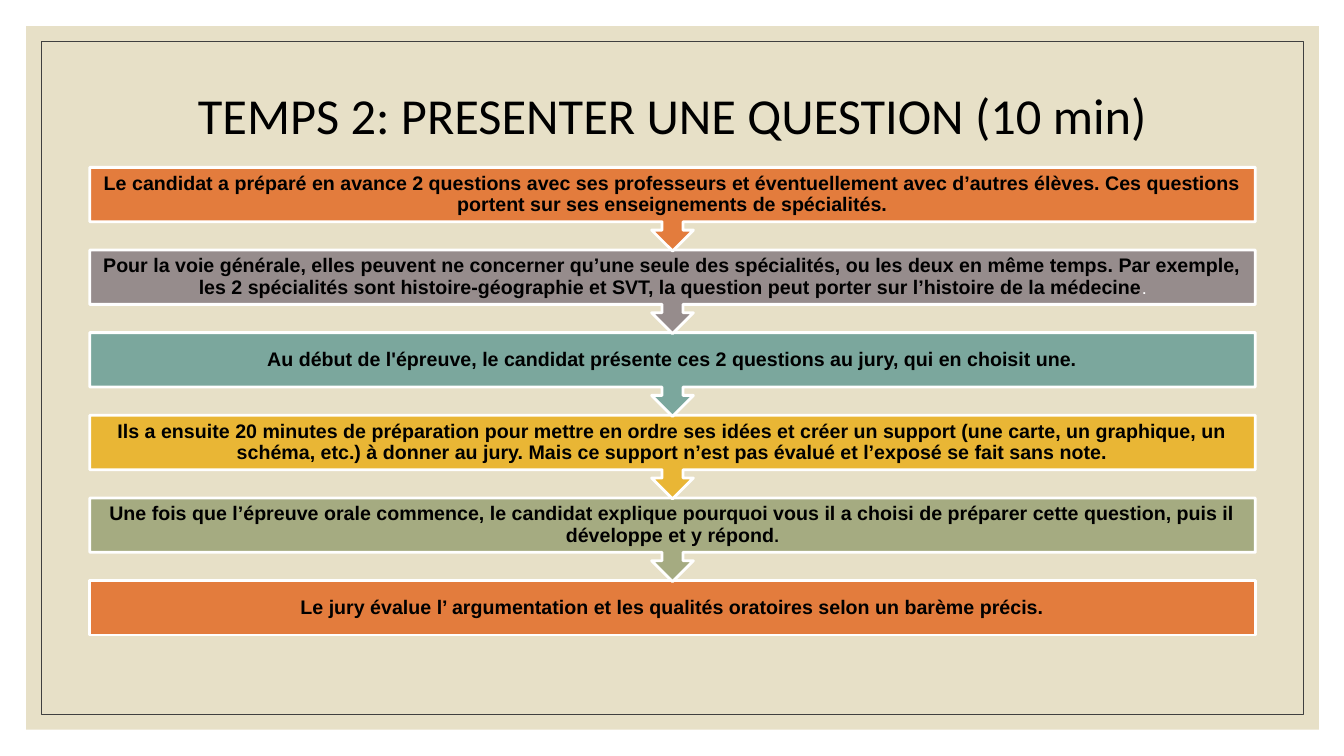
from pptx import Presentation
from pptx.dml.color import RGBColor
from pptx.enum.shapes import MSO_SHAPE
from pptx.enum.text import MSO_ANCHOR, MSO_AUTO_SIZE, PP_ALIGN
from pptx.util import Inches, Pt

RECTANGLE = MSO_SHAPE.RECTANGLE
CALLOUT = MSO_SHAPE.UP_ARROW_CALLOUT
MIDDLE = MSO_ANCHOR.MIDDLE
CENTER = PP_ALIGN.CENTER
NO_AUTOFIT = MSO_AUTO_SIZE.NONE
TITLE_ONLY = 5

BLACK, WHITE = "000000", "FFFFFF"
STEP_LEFT, STEP_WIDTH = 0.89, 11.56
STEP_TOP, STEP_PITCH = 1.66, 0.82
BOX_HEIGHT, CALLOUT_HEIGHT = 0.54, 0.83

# Each step: fill colour, then its runs as (text, size, colour)
STEPS = [
    ("E37C3D", [("Le candidat a préparé en avance 2 questions avec ses professeurs et "
                 "éventuellement avec d’autres élèves. Ces questions portent sur ses "
                 "enseignements de spécialités.", 14, BLACK)]),
    ("968C8C", [("Pour la voie générale, elles peuvent ne concerner qu’une seule des "
                 "spécialités, ou les deux en même temps. Par exemple, les 2 spécialités "
                 "sont histoire-géographie et SVT, la question peut porter sur l’histoire "
                 "de la médecine", 14, BLACK),
                (".", 9, WHITE)]),
    ("7BA79D", [("Au début de l'épreuve, le candidat présente ces 2 questions au jury, "
                 "qui en choisit une.", 14, BLACK)]),
    ("E9B635", [("Ils a ensuite 20 minutes de préparation pour mettre en ordre ses idées "
                 "et créer un support (une carte, un graphique, un schéma, etc.) à donner "
                 "au jury. Mais ce support n’est pas évalué et l’exposé se fait sans "
                 "note.", 14, BLACK)]),
    ("A5AB81", [("Une fois que l’épreuve orale commence, le candidat explique pourquoi "
                 "vous il a choisi de préparer cette question, puis il développe et y "
                 "répond", 14, BLACK),
                (".", 12, BLACK)]),
    ("E37C3D", [("Le jury évalue l’ argumentation et les qualités oratoires selon un "
                 "barème précis.", 14, BLACK)]),
]


def color(hex_string):
    return RGBColor.from_string(hex_string)


class SlideBuilder:
    def __init__(self, slide):
        self.slide = slide
        self.title_font = "Calibri"
        self.body_font = "Arial"

    def shape(self, kind, box, fill=None, line=None, line_width=1, rotation=0):
        shape = self.slide.shapes.add_shape(kind, *map(Inches, box))
        shape.shadow.inherit = False
        shape.rotation = rotation
        if fill:
            shape.fill.solid()
            shape.fill.fore_color.rgb = color(fill)
        else:
            shape.fill.background()
        if line:
            shape.line.color.rgb = color(line)
            shape.line.width = Pt(line_width)
        else:
            shape.line.fill.background()

    def fill_frame(self, frame, runs, font, margin, bold=False):
        """Set up a centred text frame and return its paragraph."""
        frame.word_wrap = True
        frame.auto_size = NO_AUTOFIT
        frame.vertical_anchor = MIDDLE
        frame.margin_left = frame.margin_right = Inches(margin)
        frame.margin_top = frame.margin_bottom = Inches(margin)
        paragraph = frame.paragraphs[0]
        paragraph.alignment = CENTER
        for text, size, text_color in runs:
            run = paragraph.add_run()
            run.text = text
            run.font.name = font
            run.font.size = Pt(size)
            run.font.bold = bold
            run.font.color.rgb = color(text_color)
        return paragraph

    def text(self, box, runs):
        text_box = self.slide.shapes.add_textbox(*map(Inches, box))
        paragraph = self.fill_frame(text_box.text_frame, runs, self.body_font, 0.11, True)
        paragraph.line_spacing = 0.9

    def title(self, box, text, size):
        """Place the title and bring it in front of the background panels."""
        title = self.slide.shapes.title
        title.left, title.top, title.width, title.height = map(Inches, box)
        self.fill_frame(title.text_frame, [(text, size, BLACK)], self.title_font, 0)
        title.element.getparent().append(title.element)

    def step(self, top, fill, runs, is_last):
        text_box = (STEP_LEFT, top, STEP_WIDTH, BOX_HEIGHT)
        if is_last:
            self.shape(RECTANGLE, text_box, fill, WHITE, 2)
        else:
            callout_box = (STEP_LEFT, top, STEP_WIDTH, CALLOUT_HEIGHT)
            self.shape(CALLOUT, callout_box, fill, WHITE, 2, rotation=180)
        self.text(text_box, runs)


def main():
    presentation = Presentation()
    presentation.slide_width = Inches(13.33)
    presentation.slide_height = Inches(7.5)
    layout = presentation.slide_layouts[TITLE_ONLY]
    builder = SlideBuilder(presentation.slides.add_slide(layout))

    builder.shape(RECTANGLE, (0.26, 0.26, 12.82, 6.98), fill="E7E0C7")
    builder.shape(RECTANGLE, (0.41, 0.41, 12.52, 6.68), line="404040", line_width=0.5)

    # Bottom step first, so that each arrow tip lies over the next box
    last = len(STEPS) - 1
    for index in range(last, -1, -1):
        fill, runs = STEPS[index]
        builder.step(STEP_TOP + index * STEP_PITCH, fill, runs, index == last)

    builder.title((1.17, 0.7, 11, 0.87), "TEMPS 2: PRESENTER UNE QUESTION (10 min)", 36)
    presentation.save("out.pptx")


if __name__ == "__main__":
    main()
